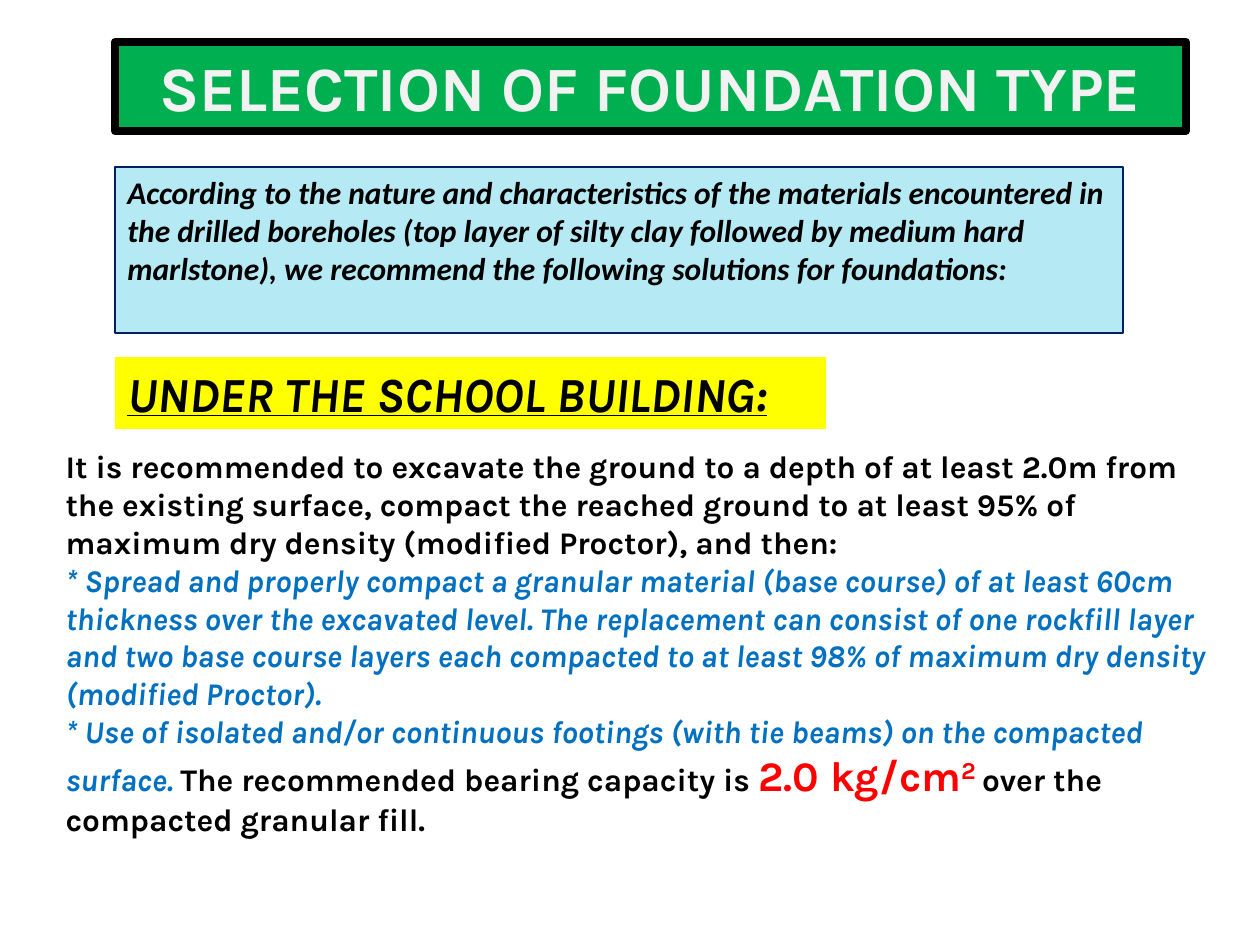
from pptx import Presentation
from pptx import util as u
from pptx.dml.color import RGBColor
from pptx.enum import shapes, text
from pptx.oxml.ns import qn
from lxml import etree

PX = 914400 / 126
COLORS = {
    "black": "000000", "green": "00B050", "off_white": "F2F2F2",
    "pale_blue": "B5E9F4", "navy": "002060", "yellow": "FFFF00",
    "blue": "0070C0", "red": "FF0000",
}


def px(n):
    return u.Emu(round(n * PX))


def rgb(name):
    return RGBColor.from_string(COLORS[name])


class Deck:
    """Holds the text style and the current slide."""

    font, size = "Karla", 18

    def __init__(self, width, height):
        self.prs = Presentation()
        self.prs.slide_width, self.prs.slide_height = px(width), px(height)
        self.slide = self.prs.slides.add_slide(self.prs.slide_layouts[1])

    def place(self, sp, box):
        sp.left, sp.top, sp.width, sp.height = map(px, box)

    def paint(self, sp, fill, line=None, weight=0):
        sp.fill.solid()
        sp.fill.fore_color.rgb = rgb(fill)
        if line:
            sp.line.color.rgb = rgb(line)
            sp.line.width = u.Pt(weight)
        else:
            sp.line.fill.background()

    def setup_frame(self, tf, anchor=text.MSO_ANCHOR.TOP):
        tf.word_wrap = True
        tf.auto_size = text.MSO_AUTO_SIZE.NONE
        tf.vertical_anchor = anchor

    def style(self, r, color="black", size=None, font=None, italic=False,
              underline=False, superscript=False):
        f = r.font
        f.name, f.size, f.bold = font or self.font, u.Pt(size or self.size), True
        f.italic, f.color.rgb = italic, rgb(color)
        if underline:
            f.underline = True
        if superscript:
            r._r.get_or_add_rPr().set("baseline", "30000")

    def title(self, words, box):
        sp = self.slide.shapes.title
        self.place(sp, box)
        self.paint(sp, "green", "black", 4.5)
        self.setup_frame(sp.text_frame)
        sp.text_frame.text = words
        p = sp.text_frame.paragraphs[0]
        p.alignment = text.PP_ALIGN.CENTER
        self.style(p.runs[0], "off_white", 36)

    def panel(self, words, box, fill, line=None, weight=0, **style):
        sp = self.slide.shapes.add_shape(shapes.MSO_SHAPE.RECTANGLE, *map(px, box))
        sp.shadow.inherit = False
        self.paint(sp, fill, line, weight)
        self.setup_frame(sp.text_frame)
        sp.text_frame.text = words
        p = sp.text_frame.paragraphs[0]
        p.alignment = text.PP_ALIGN.LEFT
        self.style(p.runs[0], **style)

    def body(self, paragraphs, box):
        """Fill the body placeholder; each paragraph is a list of (words, style)."""
        sp = self.slide.placeholders[1]
        self.place(sp, box)
        tf = sp.text_frame
        self.setup_frame(tf)
        for i, runs in enumerate(paragraphs):
            p = tf.add_paragraph() if i else tf.paragraphs[0]
            p.space_before = u.Pt(0)
            pPr = p._p.get_or_add_pPr()
            pPr.set("marL", "0")
            pPr.set("indent", "0")
            etree.SubElement(pPr, qn("a:buNone"))
            for words, style in runs:
                r = p.add_run()
                r.text = words
                self.style(r, **style)


def main():
    deck = Deck(1260, 945)
    deck.title("SELECTION OF FOUNDATION TYPE", (115, 42, 1071, 89))
    deck.panel(
        "According to the nature and characteristics of the materials encountered in "
        "the drilled boreholes (top layer of silty clay followed by medium hard "
        "marlstone), we recommend the following solutions for foundations:",
        (115, 167, 1008, 166), "pale_blue", "navy", 0.75, font="Calibri", italic=True)
    deck.panel("UNDER THE SCHOOL BUILDING:", (115, 357, 711, 72), "yellow",
               size=28, italic=True, underline=True)

    step = dict(color="blue", italic=True)
    value = dict(color="red", size=24)
    deck.body([
        [("It is recommended to excavate the ground to a depth of at least 2.0m from "
          "the existing surface, compact the reached ground to at least 95% of "
          "maximum dry density (modified Proctor), and then:", {})],
        [("* Spread and properly compact a granular material (base course) of at least "
          "60cm thickness over the excavated level. The replacement can consist of one "
          "rockfill layer and two base course layers each compacted to at least 98% of "
          "maximum dry density (modified Proctor).", step)],
        [("* Use of isolated and/or continuous footings (with tie beams) on the "
          "compacted surface. ", step),
         ("The recommended bearing capacity is ", {}),
         ("2.0 kg/cm", value),
         ("2 ", dict(value, superscript=True)),
         ("over the compacted granular fill.", {})],
    ], (53, 441, 1176, 445))
    deck.prs.save("out.pptx")


if __name__ == "__main__":
    main()
